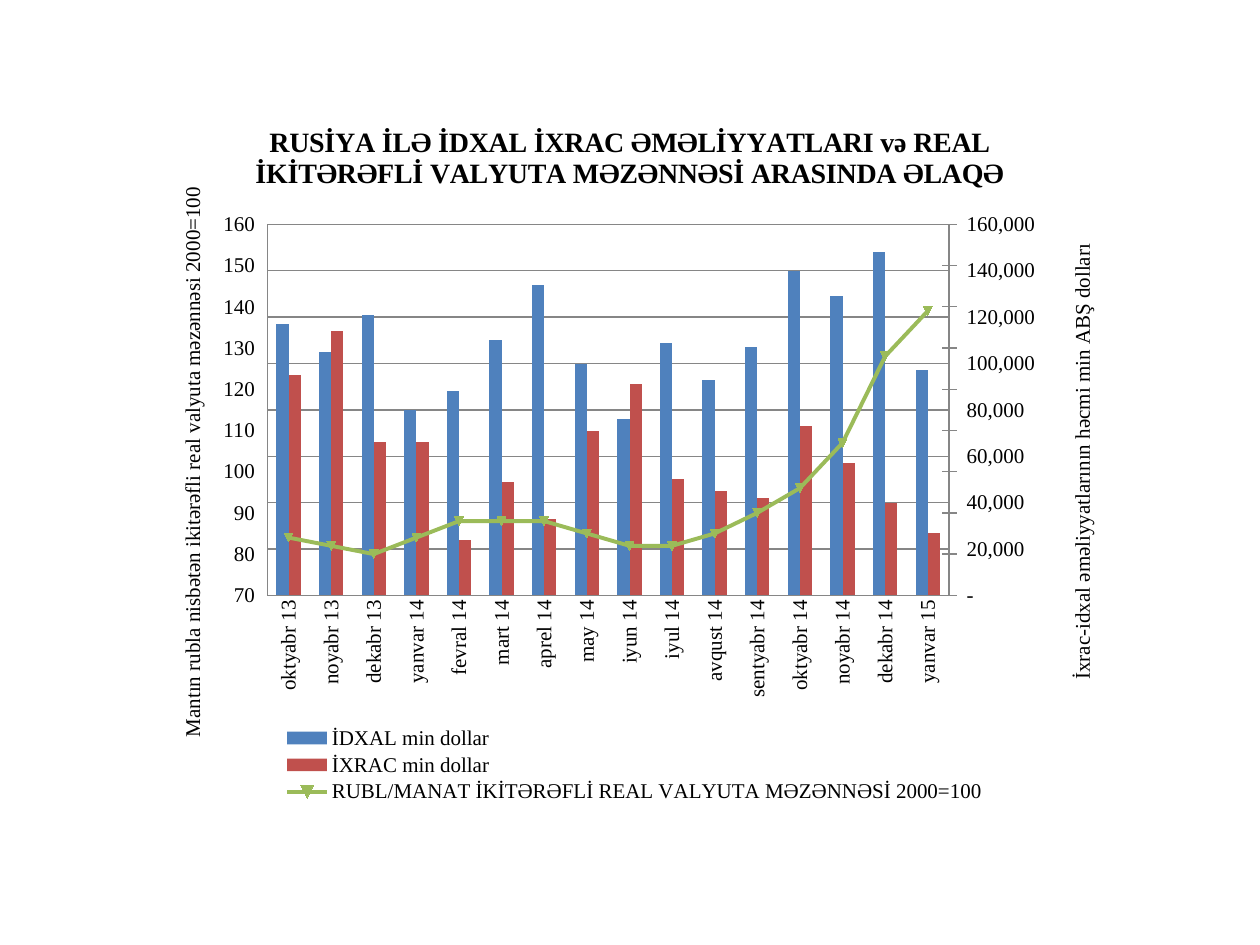
import copy

import pptx
import pptx.chart.axis
import pptx.chart.data
import pptx.dml.color
import pptx.enum.chart
import pptx.oxml
import pptx.oxml.ns
import pptx.util

Cm = pptx.util.Cm
Pt = pptx.util.Pt
FONT = "Times New Roman"
COLORS = {
    "import": "4F81BD",
    "export": "C0504D",
    "rate": "9BBB59",
    "text": "000000",
    "axis": "868686",
}
TITLE = ("RUSİYA İLƏ İDXAL İXRAC ƏMƏLİYYATLARI və REAL "
         "İKİTƏRƏFLİ VALYUTA MƏZƏNNƏSİ ARASINDA ƏLAQƏ")
LEFT = "Mantın rubla nisbətən ikitərəfli real valyuta məzənnəsi 2000=100"
RIGHT = "İxrac-idxal əməliyyatlarının həcmi min ABŞ dolları"
MONEY = '_(* #,##0_);_(* \\(#,##0\\);_(* "-"??_);_(@_)'
MONTHS = [
    "oktyabr 13", "noyabr 13", "dekabr 13", "yanvar 14", "fevral 14", "mart 14",
    "aprel 14", "may 14", "iyun 14", "iyul 14", "avqust 14", "sentyabr 14",
    "oktyabr 14", "noyabr 14", "dekabr 14", "yanvar 15",
]
SERIES = {
    "İDXAL min dollar": [
        117000, 105000, 121000, 80000, 88000, 110000, 134000, 100000,
        76000, 109000, 93000, 107000, 140000, 129000, 148000, 97000],
    "İXRAC min dollar": [
        95000, 114000, 66000, 66000, 24000, 49000, 33000, 71000,
        91000, 50000, 45000, 42000, 73000, 57000, 40000, 27000],
    "RUBL/MANAT İKİTƏRƏFLİ REAL VALYUTA MƏZƏNNƏSİ 2000=100": [
        84, 82, 80, 84, 88, 88, 88, 85, 82, 82, 85, 90, 96, 107, 128, 139],
}


def get_rgb(name):
    return pptx.dml.color.RGBColor.from_string(COLORS[name])


def style_font(font, size, bold=False):
    font.name = FONT
    font.size = Pt(size)
    font.bold = bold
    font.color.rgb = get_rgb("text")


def style_line(line, name, width=0.75):
    line.color.rgb = get_rgb(name)
    line.width = Pt(width)


def set_place(node, index, inner=False, **parts):
    for old in node.xpath("./c:layout"):
        node.remove(old)
    target = '<c:layoutTarget val="inner"/>' if inner else ""
    modes = "".join(f'<c:{k}Mode val="edge"/>' for k in parts if k in "xy")
    sizes = "".join(f'<c:{k} val="{v}"/>' for k, v in parts.items())
    node.insert(index, pptx.oxml.parse_xml(
        f'<c:layout {pptx.oxml.ns.nsdecls("c")}><c:manualLayout>'
        f'{target}{modes}{sizes}</c:manualLayout></c:layout>'))


def set_title(title, text, size, bold=False):
    title.text_frame.text = text
    style_font(title.text_frame.paragraphs[0].runs[0].font, size, bold)


def title_axis(axis, text, x, y):
    axis.has_title = True
    title = axis.axis_title
    set_title(title, text, 12)
    for body in title._element.xpath(".//a:bodyPr"):
        body.set("rot", "-5400000")
        body.set("vert", "horz")
    set_place(title._element, 1, x=x, y=y)


def style_axis(axis, tick):
    axis.major_tick_mark = tick
    axis.minor_tick_mark = pptx.enum.chart.XL_TICK_MARK.NONE
    style_line(axis.format.line, "axis")
    style_font(axis.tick_labels.font, 12)


def add_right(chart):
    area = chart._chartSpace.xpath(".//c:plotArea")[0]
    bars = area.xpath("./c:barChart")[0]
    axes = area.xpath("./c:catAx | ./c:valAx")
    ids = {ax.xpath("./c:axId")[0].get("val"): str(5000 + n)
           for n, ax in enumerate(axes)}
    line = pptx.oxml.parse_xml(
        f'<c:lineChart {pptx.oxml.ns.nsdecls("c")}>'
        '<c:grouping val="standard"/><c:varyColors val="0"/>'
        '<c:marker val="1"/>'
        + "".join(f'<c:axId val="{new}"/>' for new in ids.values())
        + '</c:lineChart>')
    rate = bars.xpath("./c:ser")[-1]
    for flag in rate.xpath("./c:invertIfNegative"):
        rate.remove(flag)
    line.insert(2, rate)
    bars.addnext(line)
    twins = [copy.deepcopy(ax) for ax in axes]
    for twin in twins:
        for node in twin.xpath("./c:axId | ./c:crossAx"):
            node.set("val", ids[node.get("val")])
    cat, val = twins
    axes[-1].addnext(val)
    val.addnext(cat)
    val.xpath("./c:crosses")[0].set("val", "max")
    val.xpath("./c:axPos")[0].set("val", "r")
    pptx.chart.axis.CategoryAxis(cat).visible = False
    return pptx.chart.axis.ValueAxis(val)


def style_axes(chart):
    ticks = pptx.enum.chart.XL_TICK_MARK
    spots = pptx.enum.chart.XL_TICK_LABEL_POSITION
    cat, val = chart.category_axis, chart.value_axis
    val.has_major_gridlines = False
    right = add_right(chart)

    style_axis(cat, ticks.NONE)
    body = cat._element.xpath("./c:txPr/a:bodyPr")[0]
    body.set("rot", "-5400000")
    body.set("vert", "horz")

    style_axis(val, ticks.NONE)
    val.minimum_scale, val.maximum_scale, val.major_unit = 0, 160000, 20000
    val.has_major_gridlines = True
    style_line(val.major_gridlines.format.line, "axis")
    val.tick_label_position = spots.HIGH
    val.tick_labels.number_format = MONEY
    val.tick_labels.number_format_is_linked = False
    title_axis(val, LEFT, 0.03, 0.12)

    style_axis(right, ticks.CROSS)
    right.minimum_scale, right.maximum_scale, right.major_unit = 70, 160, 10
    right.tick_label_position = spots.LOW
    right.tick_labels.number_format = "0"
    right.tick_labels.number_format_is_linked = False
    title_axis(right, RIGHT, 0.95, 0.2)


def style_plots(chart):
    bars, line = chart.plots
    bars.gap_width = 150
    bars.overlap = 0
    bars.vary_by_categories = False
    for series, name in zip(bars.series, ("import", "export")):
        series.format.fill.solid()
        series.format.fill.fore_color.rgb = get_rgb(name)
    rate = line.series[0]
    rate.smooth = False
    style_line(rate.format.line, "rate", 2.25)


def add_chart(slide):
    data = pptx.chart.data.CategoryChartData()
    data.categories = MONTHS
    for name, values in SERIES.items():
        data.add_series(name, values)
    chart = slide.shapes.add_chart(
        pptx.enum.chart.XL_CHART_TYPE.COLUMN_CLUSTERED,
        Cm(2.95), Cm(1.98), Cm(19.5), Cm(14.3), data).chart
    style_font(chart.font, 12)
    chart.has_title = True
    set_title(chart.chart_title, TITLE, 16, True)
    style_axes(chart)
    style_plots(chart)
    area = chart._chartSpace.xpath(".//c:plotArea")[0]
    set_place(area, 0, True, x=0.125, y=0.178, w=0.705, h=0.523)
    chart.has_legend = True
    chart.legend.position = pptx.enum.chart.XL_LEGEND_POSITION.BOTTOM
    chart.legend.include_in_layout = False
    style_font(chart.legend.font, 12)
    set_place(chart.legend._element, 1, x=0.13, y=0.88, w=0.75, h=0.12)


def main():
    deck = pptx.Presentation()
    deck.slide_width, deck.slide_height = Cm(25.4), Cm(19.05)
    add_chart(deck.slides.add_slide(deck.slide_layouts[6]))
    deck.save("out.pptx")


if __name__ == "__main__":
    main()
